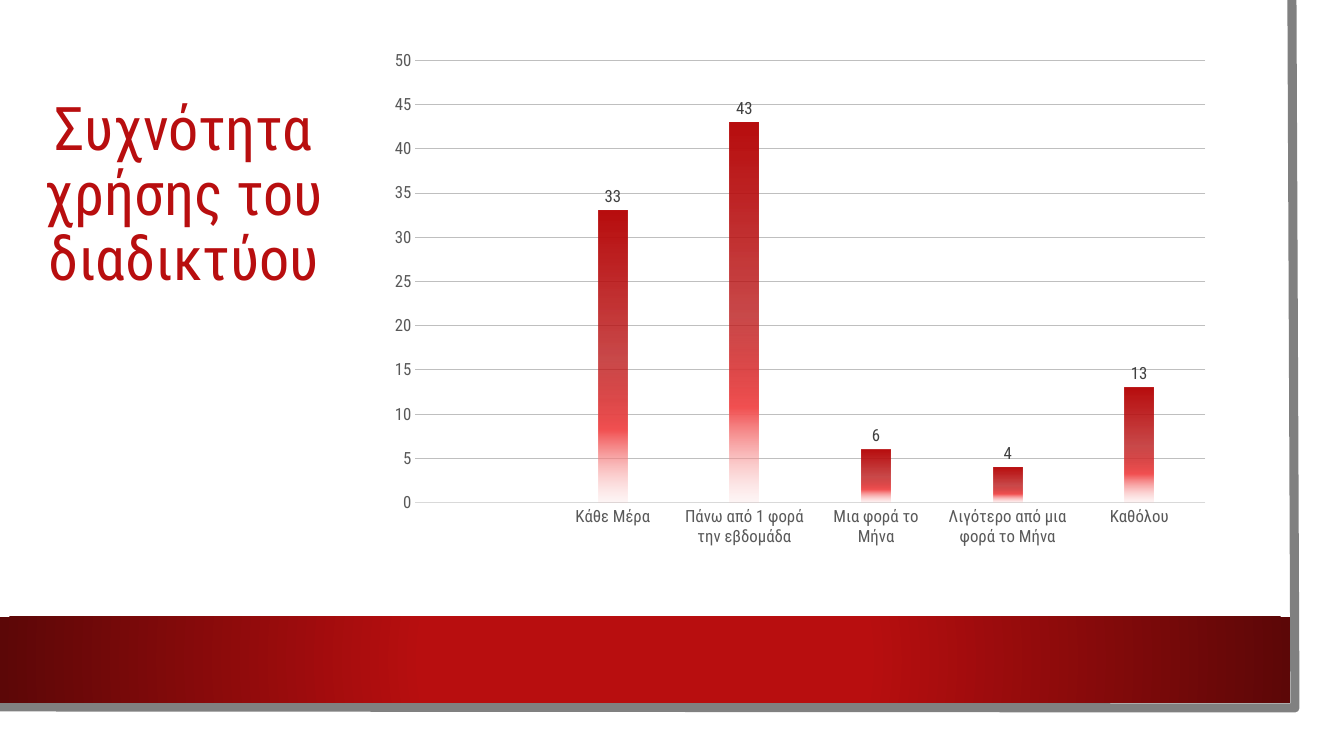
from lxml import etree
from pptx import Presentation, util as u
from pptx.chart.data import CategoryChartData
from pptx.dml.color import RGBColor
from pptx.enum import chart as ch, shapes, text
from pptx.oxml.ns import qn

PX = 914400 / 100.8
FONT = "Roboto Condensed"
WHITE = RGBColor(0xFF, 0xFF, 0xFF)
RED = RGBColor(0xB8, 0x0E, 0x0F)
DARK_RED = RGBColor(0x5C, 0x07, 0x07)
BRIGHT_RED = RGBColor(0xF2, 0x51, 0x52)
PINK = RGBColor(0xFB, 0xC5, 0xC5)
EDGE_GREY = RGBColor(0x80, 0x80, 0x80)
GRID_GREY = RGBColor(0xBF, 0xBF, 0xBF)
AXIS_GREY = RGBColor(0xD9, 0xD9, 0xD9)
TICK_GREY = RGBColor(0x59, 0x59, 0x59)
LABEL_GREY = RGBColor(0x40, 0x40, 0x40)

TITLE = "Συχνότητα χρήσης του διαδικτύου"
FREQUENCIES = {
    "": 0,
    "Κάθε Μέρα": 33,
    "Πάνω από 1 φορά την εβδομάδα": 43,
    "Μια φορά το Μήνα": 6,
    "Λιγότερο από μια φορά το Μήνα": 4,
    "Καθόλου": 13,
}


def px(*lengths):
    return [u.Emu(round(length * PX)) for length in lengths]


def set_font(font, size, color):
    font.name = FONT
    font.size = u.Pt(size)
    font.color.rgb = color


def fill_gradient(fill, owner, stops, angle=None):
    fill.solid()
    solid = next(owner.iter(qn("a:solidFill")))
    gradient = etree.Element(qn("a:gradFill"), rotWithShape="1")
    stop_list = etree.SubElement(gradient, qn("a:gsLst"))
    for position, color, opacity in stops:
        stop = etree.SubElement(stop_list, qn("a:gs"), pos=str(position * 1000))
        tint = etree.SubElement(stop, qn("a:srgbClr"), val=str(color))
        if opacity < 100:
            etree.SubElement(tint, qn("a:alpha"), val=str(opacity * 1000))
    if angle is None:
        center = etree.SubElement(gradient, qn("a:path"), path="circle")
        etree.SubElement(center, qn("a:fillToRect"),
                         dict.fromkeys("ltrb", "50000"))
    else:
        etree.SubElement(gradient, qn("a:lin"), ang=str(angle * 60000), scaled="0")
    solid.getparent().replace(solid, gradient)


def add_block(slide, box):
    block = slide.shapes.add_shape(shapes.MSO_SHAPE.RECTANGLE, *px(*box))
    block.shadow.inherit = False
    block.line.fill.background()
    return block


def draw_frame(slide, box):
    left, top, width, height = box
    panel = add_block(slide, box)
    panel.fill.solid()
    panel.fill.fore_color.rgb = WHITE

    right, bottom = left + width - 25, top + height - 25
    outline = slide.shapes.build_freeform(right - 3, top, scale=PX)
    outline.add_line_segments([(right, bottom), (left - 3, bottom - 1)], close=False)
    edge = outline.convert_to_shape()
    edge.shadow.inherit = False
    edge.fill.background()
    edge.line.color.rgb = EDGE_GREY
    edge.line.width = u.Pt(6.5)

    band = add_block(slide, (left, bottom - 91, width - 30, 86))
    fill_gradient(band.fill, band._element.spPr,
                  [(34, RED, 100), (100, DARK_RED, 100)])


def place_title(slide, box):
    title = slide.shapes.title
    slide.shapes._spTree.append(title._element)
    title.left, title.top, title.width, title.height = px(*box)
    frame = title.text_frame
    frame.text = TITLE
    frame.word_wrap = True
    frame.auto_size = text.MSO_AUTO_SIZE.NONE
    frame.vertical_anchor = text.MSO_ANCHOR.BOTTOM
    heading = frame.paragraphs[0]
    heading.alignment = text.PP_ALIGN.CENTER
    heading.line_spacing = 0.9
    set_font(heading.runs[0].font, 43, RED)


def draw_frequency_chart(slide, box):
    data = CategoryChartData()
    data.categories = list(FREQUENCIES)
    data.add_series("Series 1", list(FREQUENCIES.values()))
    chart = slide.shapes.add_chart(
        ch.XL_CHART_TYPE.COLUMN_CLUSTERED, *px(*box), data).chart
    chart.has_legend = False
    chart.has_title = False
    set_font(chart.font, 12, TICK_GREY)

    for axis in (chart.category_axis, chart.value_axis):
        axis.major_tick_mark = axis.minor_tick_mark = ch.XL_TICK_MARK.NONE
        set_font(axis.tick_labels.font, 12, TICK_GREY)
    chart.category_axis.format.line.color.rgb = AXIS_GREY
    chart.category_axis.format.line.width = u.Pt(0.75)

    counts = chart.value_axis
    counts.minimum_scale, counts.maximum_scale, counts.major_unit = 0, 50, 5
    counts.format.line.fill.background()
    counts.major_gridlines.format.line.color.rgb = GRID_GREY
    counts.major_gridlines.format.line.width = u.Pt(0.75)

    columns = chart.plots[0]
    columns.vary_by_categories = False
    columns.gap_width = 355
    columns.overlap = -70
    answers = columns.series[0]
    fill_gradient(answers.format.fill, answers._element,
                  [(0, RED, 100), (51, RED, 75), (75, BRIGHT_RED, 100),
                   (100, PINK, 15)], angle=90)

    labels = answers.data_labels
    labels.show_value = True
    labels.position = ch.XL_LABEL_POSITION.OUTSIDE_END
    labels.number_format = "0;;;"
    labels.number_format_is_linked = False
    set_font(labels.font, 12, LABEL_GREY)


def main():
    deck = Presentation()
    deck.slide_width, deck.slide_height = px(1344, 756)
    slide = deck.slides.add_slide(deck.slide_layouts[5])
    draw_frame(slide, (0, 0, 1320, 733))
    place_title(slide, (33, 76, 301, 223))
    draw_frequency_chart(slide, (378, 40, 844, 517))
    deck.save("out.pptx")


if __name__ == "__main__":
    main()
